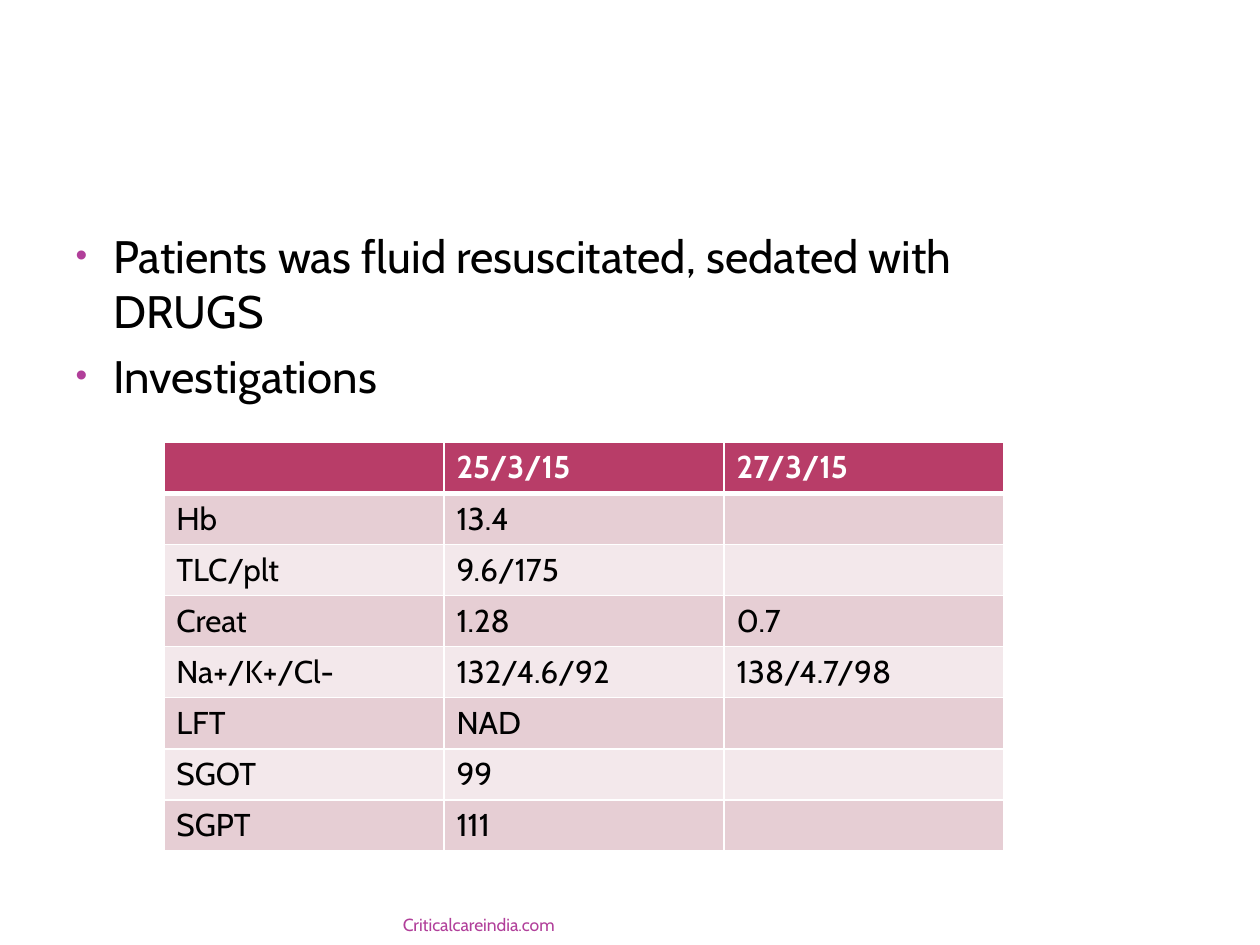
import pptx
import pptx.util
import pptx.dml.color
import pptx.enum.text
import pptx.oxml.ns
from lxml import etree

Inches, Pt = pptx.util.Inches, pptx.util.Pt
RGBColor = pptx.dml.color.RGBColor
qn = pptx.oxml.ns.qn

FONT = "Cabin"
BLACK = RGBColor(0x00, 0x00, 0x00)
WHITE = RGBColor(0xFF, 0xFF, 0xFF)
PURPLE = RGBColor(0xB1, 0x3F, 0x9A)
HEADER = RGBColor(0xB8, 0x3D, 0x68)
BANDS = (RGBColor(0xF3, 0xE8, 0xEB), RGBColor(0xE6, 0xCE, 0xD4))

POINTS = ["Patients was fluid resuscitated, sedated with DRUGS", "Investigations"]
RESULTS = [
    ("", "25/3/15", "27/3/15"),
    ("Hb", "13.4", ""),
    ("TLC/plt", "9.6/175", ""),
    ("Creat", "1.28", "0.7"),
    ("Na+/K+/Cl-", "132/4.6/92", "138/4.7/98"),
    ("LFT", "NAD", ""),
    ("SGOT", "99", ""),
    ("SGPT", "111", ""),
]
FOOTER = "Criticalcareindia.com"


def style(para, size, color, bold=False):
    for span in para.runs:
        span.font.name = FONT
        span.font.size = Pt(size)
        span.font.bold = bold
        span.font.color.rgb = color


def place(shape, left, top, width, height):
    shape.left, shape.top = Inches(left), Inches(top)
    shape.width, shape.height = Inches(width), Inches(height)


def add_bullet(para):
    props = para._p.get_or_add_pPr()
    props.set("marL", str(Inches(0.3)))
    props.set("indent", str(-Inches(0.3)))
    color = etree.SubElement(props, qn("a:buClr"))
    etree.SubElement(color, qn("a:srgbClr"), val=str(PURPLE))
    etree.SubElement(props, qn("a:buSzPct"), val="73000")
    etree.SubElement(props, qn("a:buFont"), typeface="Arial")
    etree.SubElement(props, qn("a:buChar"), char="•")


def set_borders(cell, bottom_width):
    """Draw white borders; the lines must come before the fill in the cell."""
    props = cell._tc.get_or_add_tcPr()
    widths = {"a:lnL": 1, "a:lnR": 1, "a:lnT": 1, "a:lnB": bottom_width}
    for index, (tag, width) in enumerate(widths.items()):
        line = etree.Element(qn(tag), w=str(Pt(width)))
        fill = etree.SubElement(line, qn("a:solidFill"))
        etree.SubElement(fill, qn("a:srgbClr"), val=str(WHITE))
        props.insert(index, line)


def add_points(page):
    body = page.placeholders[1]
    place(body, 0.5, 1.76, 7.92, 5.3)
    body.text_frame.text = "\n".join(POINTS)
    for index, para in enumerate(body.text_frame.paragraphs):
        add_bullet(para)
        para.space_before = Pt(6 if index else 0)
        style(para, 26, BLACK)


def add_results(page):
    frame = page.shapes.add_table(len(RESULTS), len(RESULTS[0]), Inches(1.3),
                                  Inches(3.51), Inches(6.67), Inches(3.24))
    for row, values in enumerate(RESULTS):
        is_header = row == 0
        for column, value in enumerate(values):
            cell = frame.table.cell(row, column)
            cell.text = value
            cell.fill.solid()
            cell.fill.fore_color.rgb = HEADER if is_header else BANDS[row % 2]
            set_borders(cell, 3 if is_header else 1)
            style(cell.text_frame.paragraphs[0], 18,
                  WHITE if is_header else BLACK, is_header)


def add_footer(page):
    box = page.shapes.add_textbox(Inches(0.5), Inches(7.17), Inches(4), Inches(0.25))
    text = box.text_frame
    text.word_wrap = True
    text.vertical_anchor = pptx.enum.text.MSO_ANCHOR.BOTTOM
    text.margin_top = text.margin_bottom = 0
    text.text = FOOTER
    text.paragraphs[0].alignment = pptx.enum.text.PP_ALIGN.RIGHT
    style(text.paragraphs[0], 10, PURPLE)


def main():
    deck = pptx.Presentation()
    deck.slide_width, deck.slide_height = Inches(10), Inches(7.5)
    page = deck.slides.add_slide(deck.slide_layouts[1])
    title = page.shapes.title._element
    title.getparent().remove(title)
    add_points(page)
    add_results(page)
    add_footer(page)
    deck.save("out.pptx")


if __name__ == "__main__":
    main()
